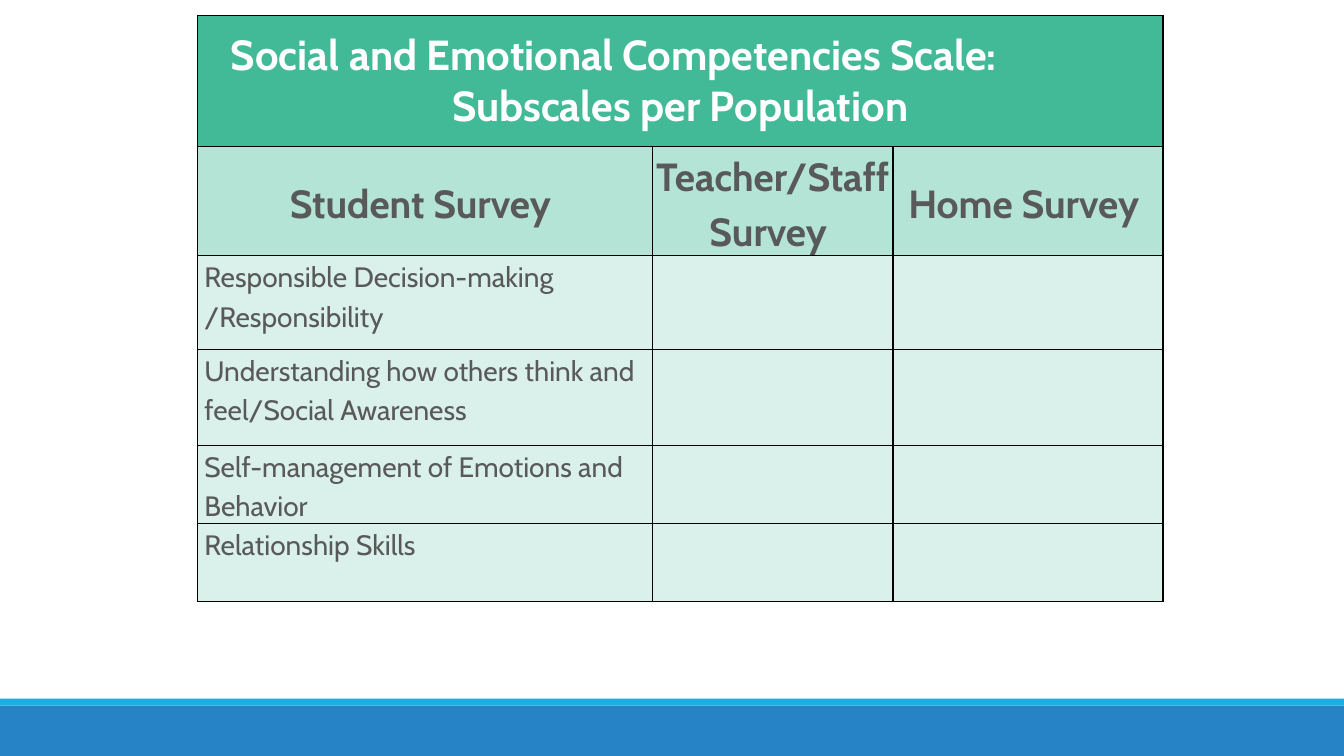
from lxml.etree import SubElement
from pptx import Presentation
from pptx.dml.color import RGBColor
from pptx.enum.shapes import MSO_SHAPE
from pptx.enum.text import MSO_ANCHOR, PP_ALIGN
from pptx.oxml.ns import qn
from pptx.util import Pt

BLUE = RGBColor(0x26, 0x83, 0xC6)
CYAN = RGBColor(0x1C, 0xAD, 0xE4)
GREEN = RGBColor(0x42, 0xBA, 0x97)
MINT = RGBColor(0xB3, 0xE4, 0xD6)
PALE = RGBColor(0xD9, 0xF1, 0xEA)
WHITE = RGBColor(0xFF, 0xFF, 0xFF)
GREY = RGBColor(0x59, 0x59, 0x59)

FONT = "Cabin"
WIDE, HIGH = 960, 540
COLS = [324.8, 172.1, 192.9]
ROWS = [93.6, 78, 67, 68.4, 55.8, 55.2]
TITLE = ["Social and Emotional Competencies Scale:", "Subscales per Population"]
HEADS = ["Student Survey ", "Teacher/Staff Survey ", "Home Survey "]
SKILLS = [
    "Responsible Decision-making /Responsibility",
    "Understanding how others think and feel/Social Awareness",
    "Self-management of Emotions and Behavior",
    "Relationship Skills",
]


def add_bar(slide, top, height, color):
    bar = slide.shapes.add_shape(MSO_SHAPE.RECTANGLE, 0, Pt(top), Pt(WIDE), Pt(height))
    bar.shadow.inherit = False
    bar.fill.solid()
    bar.fill.fore_color.rgb = color
    bar.line.fill.background()


def add_footer(slide, top, height):
    """Thick band with a thin stripe along its top edge."""
    stripe = 5
    add_bar(slide, top + stripe, height - stripe, BLUE)
    add_bar(slide, top, stripe, CYAN)


def set_cell(cell, fill, side, anchor):
    """Give a cell its fill, black borders, side margins and anchor."""
    props = cell._tc.get_or_add_tcPr()
    for edge in ("a:lnL", "a:lnR", "a:lnT", "a:lnB"):
        line = SubElement(props, qn(edge), w=str(Pt(1)))
        ink = SubElement(line, qn("a:solidFill"))
        SubElement(ink, qn("a:srgbClr"), val="000000")
    cell.fill.solid()
    cell.fill.fore_color.rgb = fill
    cell.margin_left = cell.margin_right = Pt(side)
    cell.margin_top = cell.margin_bottom = 0
    cell.vertical_anchor = anchor


def add_run(para, text, size, color, bold):
    run = para.add_run()
    run.text = text
    run.font.name = FONT
    run.font.size = Pt(size)
    run.font.bold = bold
    run.font.color.rgb = color


def fill_title(cell):
    first = cell.text_frame.paragraphs[0]
    first.alignment = PP_ALIGN.LEFT
    first._p.get_or_add_pPr().set("marL", str(Pt(22)))
    second = cell.text_frame.add_paragraph()
    second.alignment = PP_ALIGN.CENTER
    for para, text in zip((first, second), TITLE):
        add_run(para, text, 30, WHITE, True)


def fill_head(cell, text):
    para = cell.text_frame.paragraphs[0]
    para.alignment = PP_ALIGN.CENTER
    para.line_spacing = 1.15
    para.space_after = Pt(10)
    add_run(para, text, 28, GREY, True)


def fill_skill(cell, text):
    para = cell.text_frame.paragraphs[0]
    para.line_spacing = 1.15
    add_run(para, text, 20, GREY, False)


def add_scale(slide, left, top):
    """Table of subscales, one column per survey."""
    frame = slide.shapes.add_table(
        len(ROWS), len(COLS), Pt(left), Pt(top), Pt(sum(COLS)), Pt(sum(ROWS)))
    table = frame.table
    table.horz_banding = False
    for col, width in zip(table.columns, COLS):
        col.width = Pt(width)
    for row, height in zip(table.rows, ROWS):
        row.height = Pt(height)

    fills = [GREEN, MINT] + [PALE] * len(SKILLS)
    for i, fill in enumerate(fills):
        side, anchor = (2, MSO_ANCHOR.MIDDLE) if i < 2 else (5, MSO_ANCHOR.TOP)
        for cell in table.rows[i].cells:
            set_cell(cell, fill, side, anchor)

    table.cell(0, 0).merge(table.cell(0, len(COLS) - 1))
    fill_title(table.cell(0, 0))
    for j, text in enumerate(HEADS):
        fill_head(table.cell(1, j), text)
    for i, text in enumerate(SKILLS, 2):
        fill_skill(table.cell(i, 0), text)


def main():
    deck = Presentation()
    deck.slide_width, deck.slide_height = Pt(WIDE), Pt(HIGH)
    slide = deck.slides.add_slide(deck.slide_layouts[6])
    add_footer(slide, 499, HIGH - 499)
    add_scale(slide, 141, 11)
    deck.save("out.pptx")


if __name__ == "__main__":
    main()
